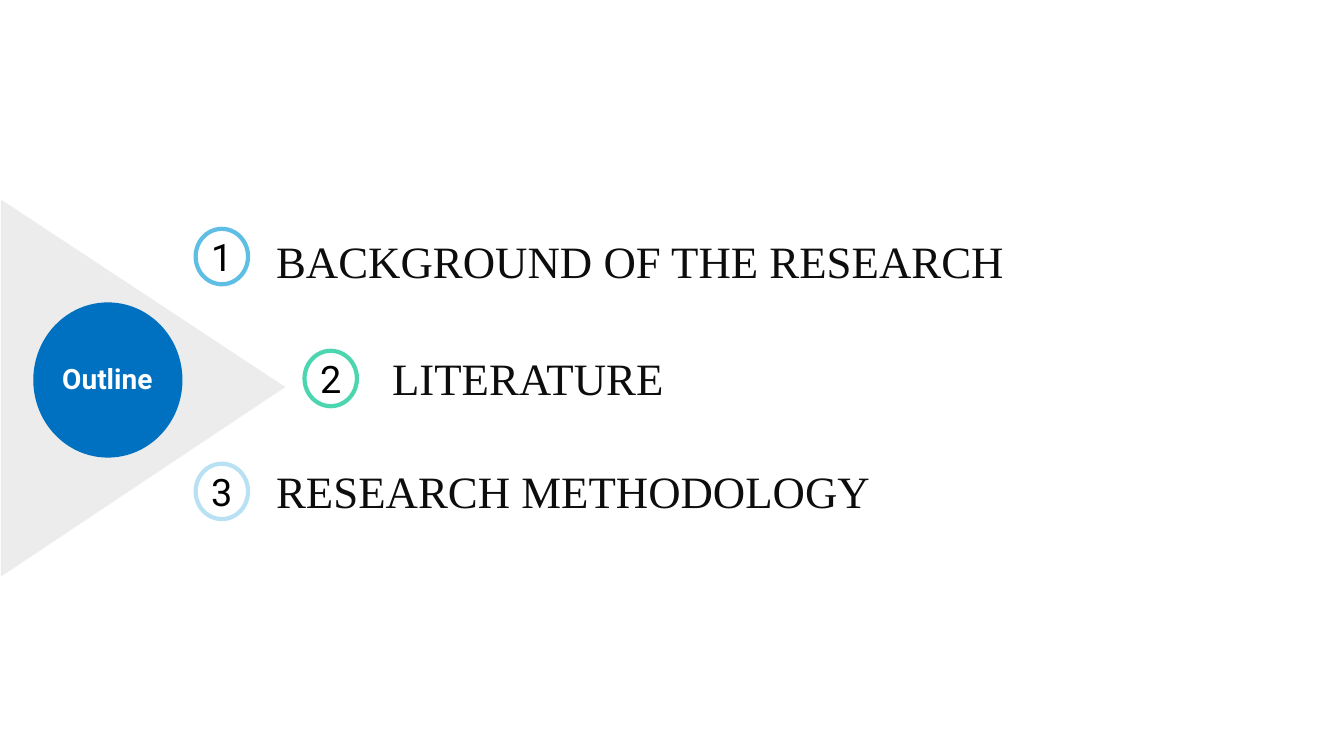
from pptx import Presentation
from pptx.dml.color import RGBColor
from pptx.enum.shapes import MSO_SHAPE as Shape
from pptx.enum.text import MSO_ANCHOR as Anchor, PP_ALIGN as Align
from pptx.util import Inches, Pt


def rgb(code):
    return RGBColor.from_string(code)


def write(shape, text, style, color, align=Align.CENTER, inset=0):
    frame = shape.text_frame
    frame.text = text
    layout = {"word_wrap": True, "vertical_anchor": Anchor.MIDDLE,
              "margin_left": Inches(inset), "margin_right": Inches(inset)}
    for key, value in layout.items():
        setattr(frame, key, value)
    line = frame.paragraphs[0]
    line.alignment = align
    font = line.runs[0].font
    for key, value in style.items():
        setattr(font, key, value)
    font.color.rgb = rgb(color)


HEAD = {"name": "Roboto", "size": Pt(20), "bold": True}
DIGIT = {"name": "Roboto", "size": Pt(27)}
TOPIC = {"name": "Times New Roman", "size": Pt(32)}

deck = Presentation()
deck.slide_width, deck.slide_height = Inches(13.33), Inches(7.5)
slide = deck.slides.add_slide(deck.slide_layouts[5])
shapes = slide.shapes

# Grey wedge and blue disc on the left
build = shapes.build_freeform(Inches(0.01), Inches(1.98))
build.add_line_segments([(Inches(2.83), Inches(3.84)),
                         (Inches(0.01), Inches(5.72))])
wedge = build.convert_to_shape()
disc = shapes.add_shape(Shape.OVAL, Inches(0.33), Inches(3),
                        Inches(1.48), Inches(1.54))
for shape, color in ((wedge, "ECECEC"), (disc, "0070C0")):
    shape.shadow.inherit = False
    shape.fill.solid()
    shape.fill.fore_color.rgb = rgb(color)
    shape.line.fill.background()

# The title sits on the disc, so it moves in front of it
title = shapes.title
title.left, title.top = Inches(0.44), Inches(3.27)
title.width, title.height = Inches(1.25), Inches(0.97)
write(title, "Outline", HEAD, "FFFFFF")
title.element.getparent().append(title.element)

# Ring left and top, ring colour, text left, top and width, topic
topics = [
    (1.94, 2.27, "5EBEE4", 2.64, 2.27, 9.93, "BACKGROUND OF THE RESEARCH"),
    (3.02, 3.48, "4CD6B0", 3.79, 3.43, 9.09, "LITERATURE"),
    (1.94, 4.6, "B8E2F3", 2.64, 4.55, 8.72, "RESEARCH METHODOLOGY"),
]
for number, (x, y, color, left, top, width, topic) in enumerate(topics, 1):
    ring = shapes.add_shape(Shape.OVAL, Inches(x), Inches(y),
                            Inches(0.52), Inches(0.55))
    ring.shadow.inherit = False
    ring.fill.solid()
    ring.fill.fore_color.rgb = rgb("FFFFFF")
    ring.line.color.rgb = rgb(color)
    ring.line.width = Pt(3)
    write(ring, str(number), DIGIT, "000000")
    label = shapes.add_textbox(Inches(left), Inches(top),
                               Inches(width), Inches(0.64))
    write(label, topic, TOPIC, "0D0D0D", Align.LEFT, 0.1)

deck.save("out.pptx")
